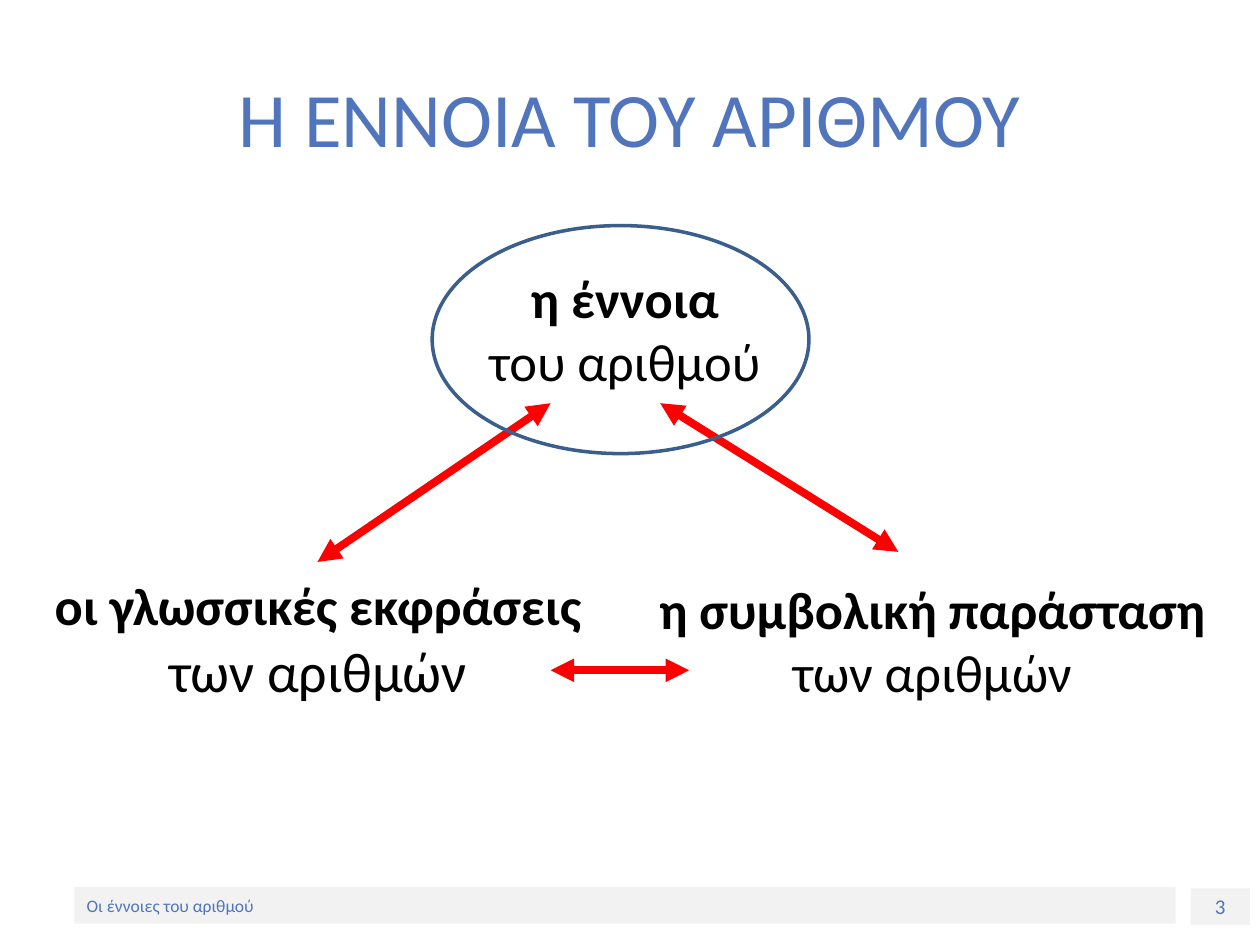
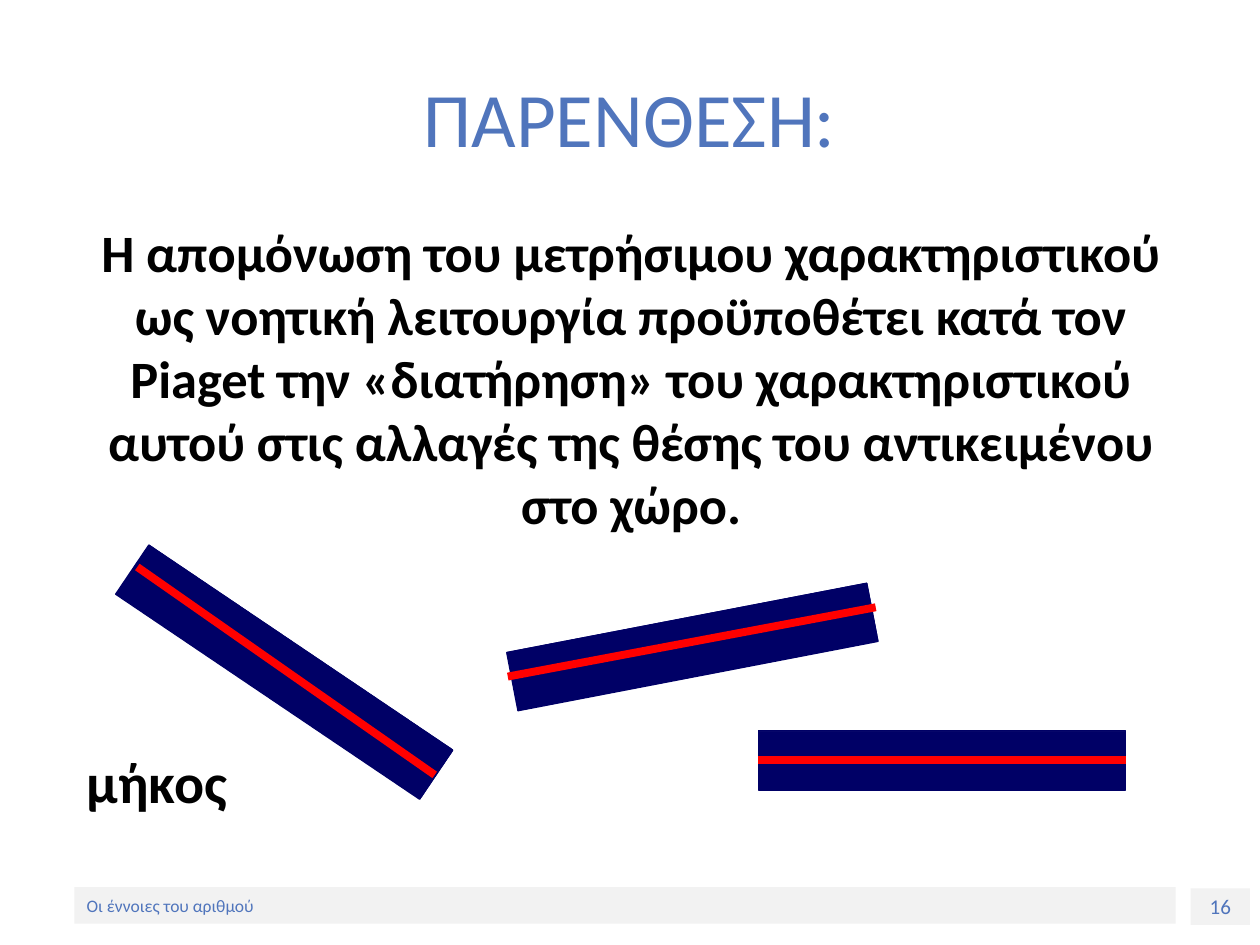
from lxml import etree
from pptx import Presentation
from pptx.dml.color import RGBColor
from pptx.enum.shapes import MSO_CONNECTOR, MSO_SHAPE
from pptx.enum.text import MSO_ANCHOR, MSO_AUTO_SIZE, PP_ALIGN
from pptx.oxml.ns import qn
from pptx.util import Inches, Pt

STRAIGHT = MSO_CONNECTOR.STRAIGHT
RECTANGLE, ELLIPSE, CUBE = MSO_SHAPE.RECTANGLE, MSO_SHAPE.OVAL, MSO_SHAPE.CUBE
TOP, MIDDLE = MSO_ANCHOR.TOP, MSO_ANCHOR.MIDDLE
LEFT, CENTER = PP_ALIGN.LEFT, PP_ALIGN.CENTER
FIXED = MSO_AUTO_SIZE.NONE

FONT = "Calibri"
COLORS = {"accent": "5075BC", "band": "F2F2F2", "text": "000000",
          "arrow": "FF0000", "outline": "3A5F8C", "ruler": "000066"}
COLUMNS, ROWS = 100, 75
FOOTER = "Οι έννοιες του αριθμού"
TITLE_AREA = (5, 3, 90, 12.5)
FOOTER_AREA = (5.9, 70.4, 87.4, 2.9)
NUMBER_AREA = (94.5, 70.5, 4.7, 2.9)
RULER_SIZE = (29.1, 4.7)


def color(name):
    """Return the named palette colour."""
    return RGBColor.from_string(COLORS[name])


def write(frame, text, *, size=30, fill="text", bold=False, align=CENTER, anchor=TOP):
    """Write text in a frame, on a new line if the frame already holds some."""
    frame.word_wrap = True
    frame.auto_size = FIXED
    frame.vertical_anchor = anchor
    paragraph = frame.paragraphs[0]
    if paragraph.runs:
        paragraph.add_line_break()
    paragraph.alignment = align
    paragraph.space_before = Pt(0)
    run = paragraph.add_run()
    run.text = text
    run.font.name, run.font.size, run.font.bold = FONT, Pt(size), bold
    run.font.color.rgb = color(fill)


class Deck:
    """Hold the shared style and the current slide."""

    def __init__(self):
        """Open an empty deck and measure its grid."""
        self.deck = Presentation()
        self.deck.slide_width, self.deck.slide_height = Inches(10), Inches(7.5)
        self.column = self.deck.slide_width / COLUMNS
        self.row = self.deck.slide_height / ROWS

    def grid(self, *cells):
        """Turn alternating columns and rows into lengths."""
        return [round(cell * (self.row if i % 2 else self.column))
                for i, cell in enumerate(cells)]

    def place(self, shape, area):
        """Move a placeholder to a grid area."""
        shape.left, shape.top, shape.width, shape.height = self.grid(*area)

    def start(self, title, number):
        """Start a slide with its footer bands and title."""
        self.slide = self.deck.slides.add_slide(self.deck.slide_layouts[1])
        self.band(NUMBER_AREA, str(number), size=12)
        self.band(FOOTER_AREA, FOOTER, size=10, align=LEFT)
        heading = self.slide.shapes.title
        self.place(heading, TITLE_AREA)
        write(heading.text_frame, title, size=44, fill="accent", anchor=MIDDLE)

    def shape(self, kind, area, fill=None, outline=None, weight=0.75):
        """Add a preset shape with optional fill and outline."""
        shape = self.slide.shapes.add_shape(kind, *self.grid(*area))
        shape.shadow.inherit = False
        if fill:
            shape.fill.solid()
            shape.fill.fore_color.rgb = color(fill)
        else:
            shape.fill.background()
        if outline:
            shape.line.color.rgb = color(outline)
            shape.line.width = Pt(weight)
        else:
            shape.line.fill.background()
        return shape

    def band(self, area, text, **style):
        """Add a grey footer band."""
        band = self.shape(RECTANGLE, area, fill="band")
        write(band.text_frame, text, fill="accent", anchor=MIDDLE, **style)

    def body(self, area, *lines):
        """Fill the body placeholder with unbulleted lines."""
        body = self.slide.placeholders[1]
        self.place(body, area)
        properties = body.text_frame.paragraphs[0]._p.get_or_add_pPr()
        properties.set("marL", "0")
        properties.set("indent", "0")
        etree.SubElement(properties, qn("a:buNone"))
        for text, style in lines:
            write(body.text_frame, text, **style)

    def label(self, area, *lines):
        """Add a text box with one format per line."""
        box = self.slide.shapes.add_textbox(*self.grid(*area))
        for text, style in lines:
            write(box.text_frame, text, **style)

    def line(self, start, end, arrows=False):
        """Add a thick red line, with arrowheads on both ends if asked."""
        line = self.slide.shapes.add_connector(STRAIGHT, *self.grid(*start, *end))
        line.line.color.rgb = color("arrow")
        line.line.width = Pt(4.5)
        if arrows:
            for end_name in ("a:headEnd", "a:tailEnd"):
                etree.SubElement(line.line._get_or_add_ln(), qn(end_name), type="triangle")
        etree.SubElement(line._element.spPr, qn("a:effectLst"))

    def ruler(self, corner, angle, start, end):
        """Add a rotated ruler with its length marked in red."""
        ruler = self.shape(CUBE, (*corner, *RULER_SIZE), "ruler", "ruler")
        ruler.adjustments[0] = 0
        ruler.rotation = angle
        self.line(start, end)


def main():
    """Build and save both slides."""
    deck = Deck()
    strong, plain = {"bold": True}, {}

    deck.start("Η ΕΝΝΟΙΑ ΤΟΥ ΑΡΙΘΜΟΥ", 3)
    deck.body((4.6, 20.6, 90, 42.8), ("η έννοια", strong), ("του αριθμού", plain))
    deck.label((2, 45, 46.5, 11.4),
               ("οι γλωσσικές εκφράσεις", strong), ("των αριθμών", {"size": 32}))
    deck.label((49.2, 45.3, 49.6, 11.1),
               ("η συμβολική παράσταση", strong), ("των αριθμών", plain))
    for start, end in (((43.7, 32), (25.2, 44.6)),
                       ((52.4, 32), (71.3, 43.8)),
                       ((43.7, 53.2), (54.7, 53.2))):
        deck.line(start, end, arrows=True)
    deck.shape(ELLIPSE, (34.3, 17.9, 29.9, 18.1), outline="outline", weight=2)

    deck.start("ΠΑΡΕΝΘΕΣΗ:", 16)
    deck.body((5.1, 17, 90, 49.5),
              ("Η απομόνωση του μετρήσιμου χαρακτηριστικού ως νοητική λειτουργία "
               "προϋποθέτει κατά τον Piaget την «διατήρηση» του χαρακτηριστικού "
               "αυτού στις αλλαγές της θέσης του αντικειμένου στο χώρο.", strong))
    for ruler in (((8, 51), 34, (10.9, 45), (34.5, 61.5)),
                  ((40.4, 49), 349.1, (40.3, 53.7), (69.5, 48.2)),
                  ((60.2, 58), 0, (60.2, 60.3), (89.4, 60.3))):
        deck.ruler(*ruler)
    deck.label((5.9, 58.8, 15, 11.7), ("μήκος", {"size": 32, "bold": True, "align": LEFT}))

    deck.deck.save("out.pptx")


if __name__ == "__main__":
    main()
